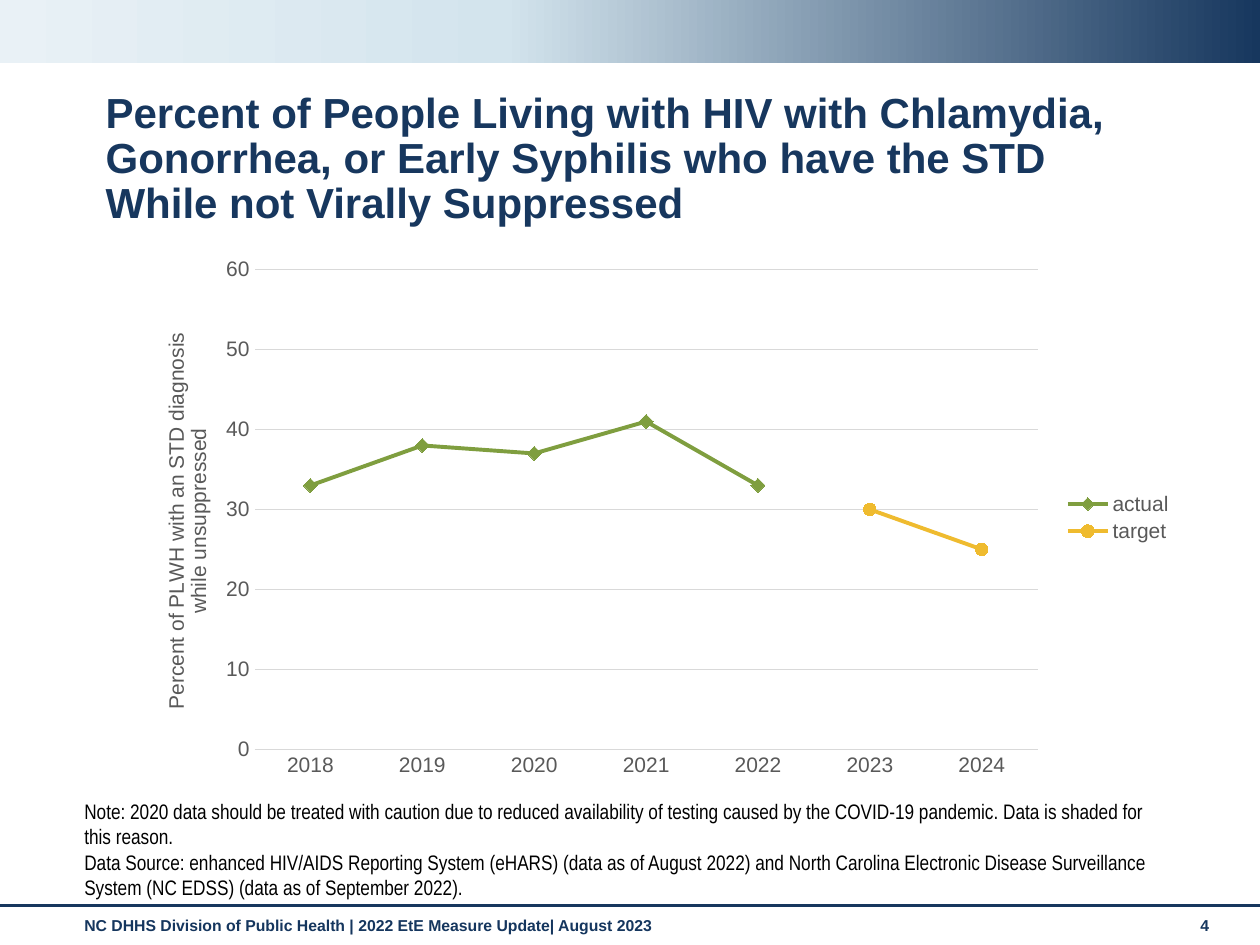
from copy import deepcopy

from lxml import etree
from pptx import Presentation
from pptx.chart.data import CategoryChartData
from pptx.dml.color import RGBColor
from pptx.enum.chart import XL_CHART_TYPE, XL_LEGEND_POSITION, XL_MARKER_STYLE, XL_TICK_MARK
from pptx.enum.shapes import MSO_CONNECTOR, MSO_SHAPE
from pptx.enum.text import MSO_ANCHOR
from pptx.oxml import parse_xml
from pptx.oxml.ns import nsdecls, qn
from pptx.util import Cm, Pt

NAVY, GREY, RULE = "17375E", "595959", "D9D9D9"


def color(code):
    return RGBColor.from_string(code)


def style(font, size, code, name="Arial", bold=False):
    font.size, font.name, font.bold = Pt(size), name, bold
    font.color.rgb = color(code)


def text(slide, box, *lines, size=12, code=NAVY, name="Arial", bold=False,
         anchor=MSO_ANCHOR.TOP, space=1.0):
    frame = slide.shapes.add_textbox(*map(Cm, box)).text_frame
    frame.word_wrap = True
    frame.vertical_anchor = anchor
    for i, line in enumerate(lines):
        para = frame.paragraphs[0] if i == 0 else frame.add_paragraph()
        para.line_spacing = space
        run = para.add_run()
        run.text = line
        style(run.font, size, code, name, bold)


def banner(slide, box):
    band = slide.shapes.add_shape(MSO_SHAPE.RECTANGLE, *map(Cm, box))
    band.shadow.inherit = False
    band.line.fill.background()
    band.fill.gradient()
    band.fill.gradient_angle = 180
    # A third stop between the two default ones
    first = band.fill._fill._gradFill.find(qn("a:gsLst"))[0]
    first.addnext(deepcopy(first))
    stops = [(0, NAVY), (0.6, "D3E4ED"), (1, "E9F1F6")]
    for stop, (place, code) in zip(band.fill.gradient_stops, stops):
        stop.position = place
        stop.color.rgb = color(code)


def footer(slide, box):
    left, top, width, height = box
    rule = slide.shapes.add_connector(
        MSO_CONNECTOR.STRAIGHT, Cm(left), Cm(top), Cm(left + width), Cm(top))
    rule.line.color.rgb = color(NAVY)
    rule.line.width = Pt(1.75)
    etree.SubElement(rule._element.spPr, qn("a:effectLst"))
    text(slide, (left + 1.45, top + 0.08, 22.2, 0.74),
         "NC DHHS Division of Public Health | 2022 EtE Measure Update| August 2023",
         size=9, code="15365E", bold=True)
    text(slide, (left + 23.95, top + 0.08, 1.12, 0.76), "4",
         size=9, code="15365E", bold=True)


def place(node, index, **parts):
    """Set a manual layout, in shares of the chart, on a chart part."""
    for old in node.findall(qn("c:layout")):
        node.remove(old)
    modes = '<c:xMode val="edge"/><c:yMode val="edge"/>'
    inner = '<c:layoutTarget val="inner"/>' if "w" in parts else ""
    sizes = "".join(f'<c:{key} val="{val}"/>' for key, val in parts.items())
    node.insert(index, parse_xml(
        f'<c:layout {nsdecls("c")}><c:manualLayout>{inner}{modes}{sizes}'
        '</c:manualLayout></c:layout>'))


def trend(slide, box):
    data = CategoryChartData(number_format="#,##0")
    data.categories = [str(year) for year in range(2018, 2025)]
    data.add_series("actual", [33, 38, 37, 41, 33, None, None])
    data.add_series("target", [None] * 5 + [30, 25])
    chart = slide.shapes.add_chart(
        XL_CHART_TYPE.LINE_MARKERS, *map(Cm, box), data).chart
    style(chart.font, 12, GREY)
    chart.has_title = False
    chart.has_legend = True
    chart.legend.position = XL_LEGEND_POSITION.RIGHT
    chart.legend.include_in_layout = False
    style(chart.legend.font, 12, GREY)

    # Axes
    years, share = chart.category_axis, chart.value_axis
    for axis in (years, share):
        axis.major_tick_mark = axis.minor_tick_mark = XL_TICK_MARK.NONE
        style(axis.tick_labels.font, 12, GREY)
    share.minimum_scale, share.maximum_scale, share.major_unit = 0, 60, 10
    share.format.line.fill.background()
    share.tick_labels.number_format = "#,##0"
    share.tick_labels.number_format_is_linked = False
    for line in (years.format.line, share.major_gridlines.format.line):
        line.color.rgb = color(RULE)
        line.width = Pt(0.75)
    run = share.axis_title.text_frame.paragraphs[0].add_run()
    run.text = "Percent of PLWH with an STD diagnosis while unsuppressed"
    style(run.font, 12, GREY)
    place(share.axis_title._element, 1, x=0.03, y=0.15)

    # Series
    plot = chart.plots[0]
    plot.vary_by_categories = False
    looks = [("7F9E3F", XL_MARKER_STYLE.DIAMOND, 8),
             ("EFBB2F", XL_MARKER_STYLE.CIRCLE, 7)]
    for series, (code, mark, size) in zip(plot.series, looks):
        series.smooth = False
        series.format.line.color.rgb = color(code)
        series.format.line.width = Pt(2.25)
        series.marker.style, series.marker.size = mark, size
        series.marker.format.fill.solid()
        series.marker.format.fill.fore_color.rgb = color(code)
        series.marker.format.line.fill.background()
    place(chart._chartSpace.chart.plotArea, 0, x=0.12, y=0.04, w=0.74, h=0.89)


def main():
    deck = Presentation()
    deck.slide_width, deck.slide_height = Cm(25.4), Cm(19.05)
    slide = deck.slides.add_slide(deck.slide_layouts[6])
    banner(slide, (0, 0, 25.4, 1.27))
    footer(slide, (0, 18.26, 25.4, 0.79))
    # Heading
    text(slide, (1.88, 1.73, 21.79, 1.52),
         "Percent of People Living with HIV with Chlamydia, Gonorrhea, or Early "
         "Syphilis who have the STD While not Virally Suppressed",
         size=24, bold=True, space=0.9)
    # Notes, growing upwards from the footer rule
    text(slide, (1.45, 17.35, 22.2, 0.91),
         "Note: 2020 data should be treated with caution due to reduced availability "
         "of testing caused by the COVID-19 pandemic. Data is shaded for this reason.",
         "Data Source: enhanced HIV/AIDS Reporting System (eHARS) (data as of August "
         "2022) and North Carolina Electronic Disease Surveillance System (NC EDSS) "
         "(data as of September 2022).",
         code="000000", name="Arial Narrow", anchor=MSO_ANCHOR.BOTTOM)
    trend(slide, (2.57, 5, 21.34, 10.87))
    deck.save("out.pptx")


if __name__ == "__main__":
    main()
